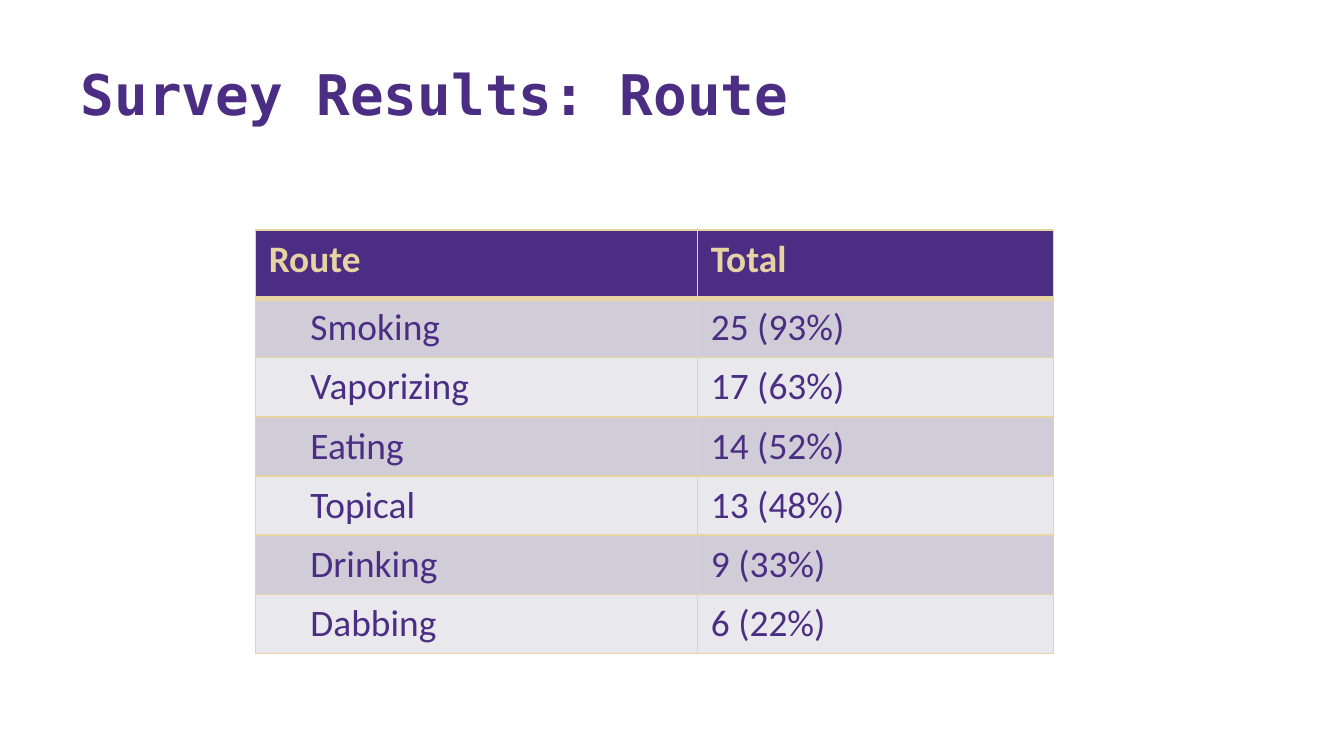
from lxml import etree
from pptx import Presentation
from pptx.dml.color import RGBColor
from pptx.enum import text as t
from pptx.oxml import ns
from pptx.util import Inches, Pt

# Content
TITLE = "Survey Results: Route"
ROWS = [
    ("Route", "Total"),
    ("Smoking", "25 (93%)"),
    ("Vaporizing", "17 (63%)"),
    ("Eating", "14 (52%)"),
    ("Topical", "13 (48%)"),
    ("Drinking", "9 (33%)"),
    ("Dabbing", "6 (22%)"),
]

# Style
PURPLE = RGBColor(0x4B, 0x2E, 0x83)
GOLD = RGBColor(0xE8, 0xD3, 0xA2)
DARK = RGBColor(0xD0, 0xCD, 0xD9)
LIGHT = RGBColor(0xE9, 0xE8, 0xED)
COLS = (3.29, 2.65)
HEAD, BODY = 0.51, 0.44


def add_run(para, words, font, size, color, bold):
    run = para.add_run()
    run.text = words
    run.font.name = font
    run.font.size = Pt(size)
    run.font.bold = bold
    run.font.color.rgb = color


def add_edge(cell, side, color, width):
    props = cell._tc.get_or_add_tcPr()
    line = etree.SubElement(props, ns.qn("a:ln" + side), w=str(Pt(width)),
                            cap="flat", cmpd="sng", algn="ctr")
    fill = etree.SubElement(line, ns.qn("a:solidFill"))
    etree.SubElement(fill, ns.qn("a:srgbClr"), val=str(color))
    etree.SubElement(line, ns.qn("a:prstDash"), val="solid")


deck = Presentation()
deck.slide_width, deck.slide_height = Inches(10), Inches(5.625)
slide = deck.slides.add_slide(deck.slide_layouts[5])

# Title
title = slide.shapes.title
title.left, title.top = Inches(0.5), Inches(0.4)
title.width, title.height = Inches(8.94), Inches(1.09)
frame = title.text_frame
frame.auto_size = t.MSO_AUTO_SIZE.NONE
frame.vertical_anchor = t.MSO_ANCHOR.TOP
frame.margin_top = Inches(0.04)
para = frame.paragraphs[0]
para.alignment = t.PP_ALIGN.LEFT
add_run(para, TITLE, "DejaVu Sans Mono", 30, PURPLE, True)

# Table
high = HEAD + BODY * (len(ROWS) - 1)
table = slide.shapes.add_table(
    len(ROWS), len(COLS), Inches(1.9), Inches(1.71),
    Inches(sum(COLS)), Inches(high)).table
for col, width in zip(table.columns, COLS):
    col.width = Inches(width)

for r, row in enumerate(ROWS):
    head = r == 0
    table.rows[r].height = Inches(HEAD if head else BODY)
    for c, words in enumerate(row):
        cell = table.cell(r, c)
        # Gold rules, heavier under the heading
        for side in "LRTB":
            add_edge(cell, side, GOLD, 3 if head and side == "B" else 1)
        cell.fill.solid()
        cell.fill.fore_color.rgb = PURPLE if head else DARK if r % 2 else LIGHT
        # Route names are indented under their heading
        cell.margin_left = Inches(0.1 if head or c else 0.41)
        add_run(cell.text_frame.paragraphs[0], words, "Calibri", 20,
                GOLD if head else PURPLE, head)

deck.save("out.pptx")
